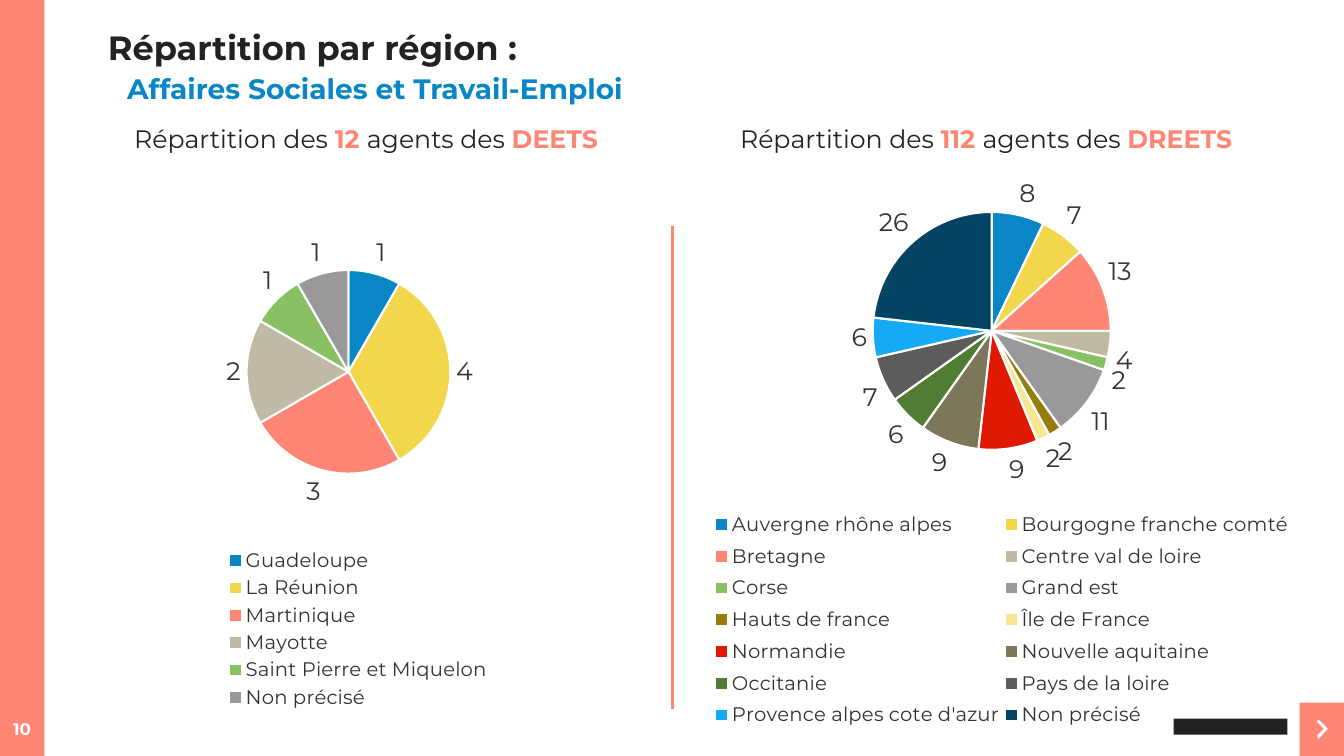
from lxml import etree
from pptx import Presentation
from pptx.chart.data import CategoryChartData
from pptx.dml.color import RGBColor
from pptx.enum.chart import XL_CHART_TYPE, XL_LABEL_POSITION, XL_LEGEND_POSITION
from pptx.enum.shapes import MSO_CONNECTOR, MSO_SHAPE
from pptx.enum.text import MSO_ANCHOR, MSO_AUTO_SIZE, PP_ALIGN
from pptx.oxml.ns import qn
from pptx.util import Inches, Pt

RECTANGLE = MSO_SHAPE.RECTANGLE
CENTER = PP_ALIGN.CENTER
TOP, MIDDLE = MSO_ANCHOR.TOP, MSO_ANCHOR.MIDDLE
NO_AUTOFIT = MSO_AUTO_SIZE.NONE
PIE = XL_CHART_TYPE.PIE
OUTSIDE_END = XL_LABEL_POSITION.OUTSIDE_END
BOTTOM = XL_LEGEND_POSITION.BOTTOM

FONT = "Montserrat"
CORAL, BLUE, INK, GREY, WHITE = "FF8575", "0886C5", "222222", "333333", "FFFFFF"
SLICE_COLOURS = [BLUE, "F2D64B", CORAL, "BEBAA3", "89C064", "999999", "947D0B",
                 "F7E693", "DF1A00", "7C7758", "507D33", "5C5C5C", "15AAF5", "044362"]
PLOT_AREA = (0.275, 0.09, 0.415, 0.414)

DEETS = {"Guadeloupe": 1, "La Réunion": 4, "Martinique": 3, "Mayotte": 2,
         "Saint Pierre et Miquelon": 1, "Non précisé": 1}
DREETS = {"Auvergne rhône alpes": 8, "Bourgogne franche comté": 7, "Bretagne": 13,
          "Centre val de loire": 4, "Corse": 2, "Grand est": 11, "Hauts de france": 2,
          "Île de France": 2, "Normandie": 9, "Nouvelle aquitaine": 9, "Occitanie": 6,
          "Pays de la loire": 7, "Provence alpes cote d'azur": 6, "Non précisé": 26}


def style(font, size, colour, bold=False):
    font.name, font.size, font.bold = FONT, Pt(size), bold
    font.color.rgb = RGBColor.from_string(colour)


def set_layout(parent, position, inner=False):
    """Place a chart's plot area or legend by shares of the chart's size."""
    for old in parent.findall(qn("c:layout")):
        parent.remove(old)
    layout = etree.Element(qn("c:layout"))
    manual = etree.SubElement(layout, qn("c:manualLayout"))
    settings = [("layoutTarget", "inner")] if inner else []
    settings += [("xMode", "edge"), ("yMode", "edge"), *zip("xywh", position)]
    for name, value in settings:
        etree.SubElement(manual, qn("c:" + name)).set("val", str(value))
    if inner:
        parent.insert(0, layout)
    else:
        parent.find(qn("c:legendPos")).addnext(layout)


deck = Presentation()
deck.slide_width, deck.slide_height = Inches(13.33), Inches(7.5)
page = deck.slides.add_slide(deck.slide_layouts[5])
shapes = page.shapes

# Side bar, corner button and a plain bar for the brand
for left, top, width, height, colour in [(0, 0, 0.44, 7.5, CORAL),
                                         (12.89, 6.97, 0.44, 0.53, CORAL),
                                         (11.64, 7.13, 1.13, 0.16, INK)]:
    block = shapes.add_shape(RECTANGLE, Inches(left), Inches(top), Inches(width), Inches(height))
    block.shadow.inherit = False
    block.fill.solid()
    block.fill.fore_color.rgb = RGBColor.from_string(colour)
    block.line.fill.background()

# Chevron, in hundredths of an inch
outline = shapes.build_freeform(1306, 716, scale=Inches(0.01))
outline.add_line_segments([(1313, 723), (1306, 730), (1308, 733), (1317, 723), (1308, 714)])
chevron = outline.convert_to_shape()
chevron.shadow.inherit = False
chevron.fill.solid()
chevron.fill.fore_color.rgb = RGBColor.from_string(WHITE)
chevron.line.fill.background()

page_number = shapes.add_textbox(0, Inches(7.03), Inches(0.44), Inches(0.4))
frame = page_number.text_frame
frame.margin_left = frame.margin_right = 0
frame.vertical_anchor = MIDDLE
frame.word_wrap = True
frame.text = "10"
frame.paragraphs[0].alignment = CENTER
style(frame.paragraphs[0].runs[0].font, 12, WHITE, True)

title = shapes.title
title.left, title.top, title.width, title.height = map(Inches, (0.97, 0.22, 11.8, 0.5))
frame = title.text_frame
frame.auto_size = NO_AUTOFIT
frame.vertical_anchor = TOP
frame.text = "Répartition par région :\nAffaires Sociales et Travail-Emploi"
for para, size, colour in zip(frame.paragraphs, (24, 20), (INK, BLUE)):
    para.alignment = PP_ALIGN.LEFT
    para.line_spacing = 1.0
    style(para.runs[0].font, size, colour, True)
subtitle = frame.paragraphs[1]
subtitle.space_before = Pt(3)
subtitle._p.get_or_add_pPr().set("marL", str(Inches(0.19)))

divider = shapes.add_connector(MSO_CONNECTOR.STRAIGHT, Inches(6.67), Inches(2.24),
                               Inches(6.67), Inches(7.03))
divider.line.color.rgb = RGBColor.from_string(CORAL)
divider.line.width = Pt(2.25)
etree.SubElement(divider._element.spPr, qn("a:effectLst"))

# Each half: heading box, head count, body, chart box, values, legend box
halves = [
    ((1.12, 1.15, 5.02, 0.44), "12", "DEETS",
     (0.75, 2.24, 5.61, 4.88), DEETS, (0.25, 0.65, 0.5, 0.34)),
    ((7.19, 1.15, 5.18, 0.44), "112", "DREETS",
     (6.98, 1.59, 5.92, 5.7), DREETS, (0.01, 0.6, 0.98, 0.4)),
]
for heading_box, count, body, chart_box, agents, legend_box in halves:
    box = shapes.add_textbox(*map(Inches, heading_box))
    box.text_frame.word_wrap = True
    para = box.text_frame.paragraphs[0]
    para.alignment = CENTER
    for text, size, strong in [("Répartition des ", 18, False), (count, 18, True),
                               (" ", 20, False), ("agents des ", 18, False),
                               (body, 18, True)]:
        span = para.add_run()
        span.text = text
        style(span.font, size, CORAL if strong else INK, strong)

    data = CategoryChartData()
    data.categories = list(agents)
    data.add_series("Agents", list(agents.values()))
    chart = shapes.add_chart(PIE, *map(Inches, chart_box), data).chart
    chart.has_title = False
    style(chart.font, 18, GREY)
    chart.has_legend = True
    chart.legend.position = BOTTOM
    chart.legend.include_in_layout = False
    style(chart.legend.font, 14, GREY)
    set_layout(chart.legend._element, legend_box)

    plot = chart.plots[0]
    plot.vary_by_categories = True
    set_layout(plot._element.getparent(), PLOT_AREA, inner=True)
    series = plot.series[0]
    for index, colour in enumerate(SLICE_COLOURS[:len(agents)]):
        piece = series.points[index].format
        piece.fill.solid()
        piece.fill.fore_color.rgb = RGBColor.from_string(colour)
        piece.line.color.rgb = RGBColor.from_string(WHITE)
        piece.line.width = Pt(1.5)
    labels = series.data_labels
    labels.show_value = True
    labels.position = OUTSIDE_END
    style(labels.font, 18, GREY)

deck.save("out.pptx")
